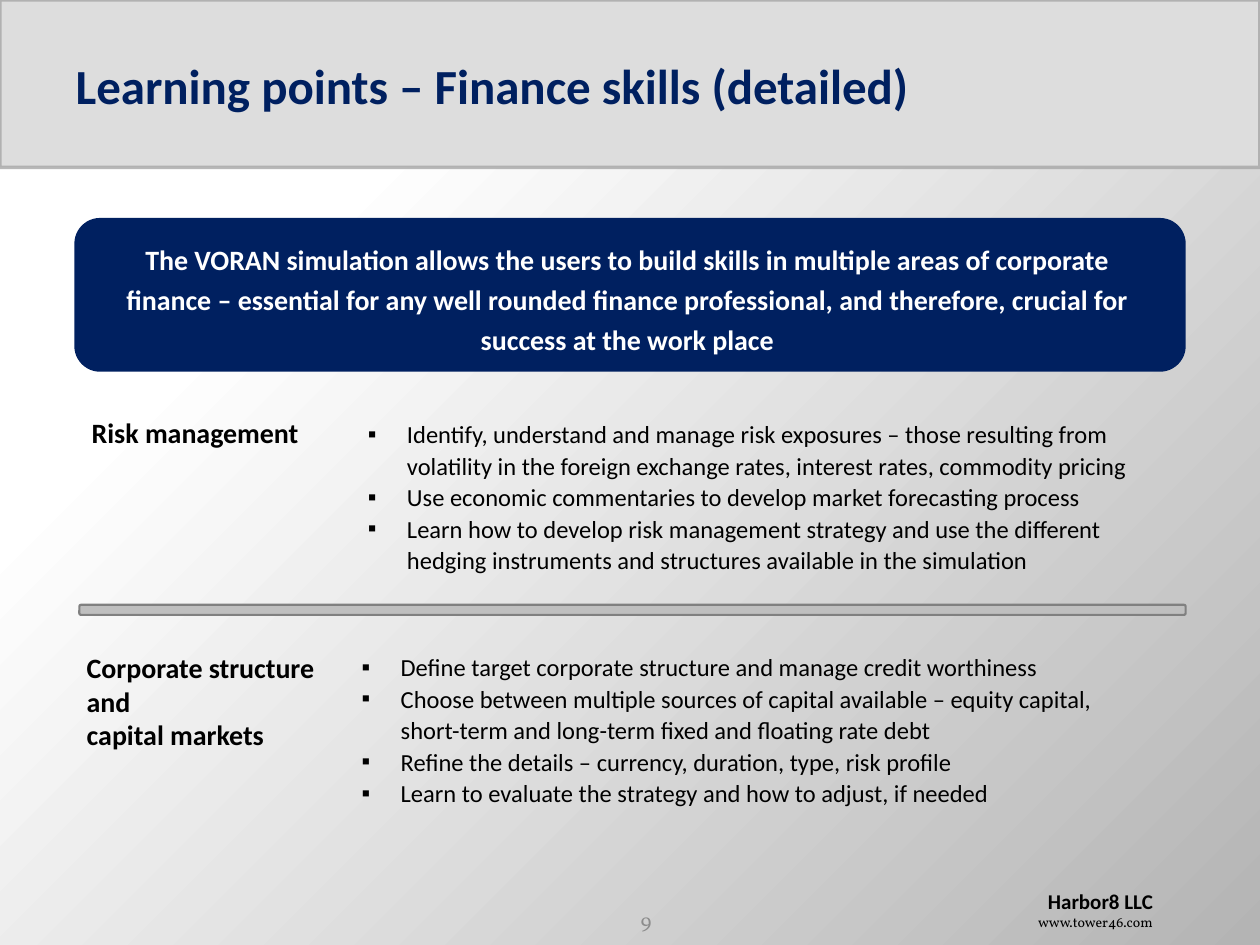
"""Build the finance skills learning points slide."""
from dataclasses import dataclass
from typing import Optional

from lxml.etree import SubElement
from pptx import Presentation
from pptx.dml.color import RGBColor
from pptx.enum.shapes import MSO_SHAPE
from pptx.enum.text import MSO_ANCHOR, MSO_AUTO_SIZE, PP_ALIGN
from pptx.oxml import parse_xml
from pptx.oxml.ns import nsdecls, qn
from pptx.util import Inches, Pt


@dataclass(frozen=True)
class Theme:
    """Colours, fonts and type sizes of the slide."""
    navy: str = "002060"
    black: str = "000000"
    white: str = "FFFFFF"
    band: str = "DDDDDD"
    band_line: str = "A6A6A6"
    rule: str = "BFBFBF"
    rule_line: str = "808080"
    shade: str = "B4B4B4"
    muted: str = "8C8C8C"
    sans: str = "Calibri"
    serif: str = "Vollkorn"
    title: int = 28
    head: int = 16
    body: int = 14
    small: int = 12
    tiny: int = 8


T = Theme()


@dataclass(frozen=True)
class Box:
    """A rectangle in inches."""
    x: float
    y: float
    w: float
    h: float


@dataclass(frozen=True)
class Style:
    """The look of a paragraph."""
    size: int
    color: str = T.black
    bold: bool = False
    font: str = T.sans
    align: PP_ALIGN = PP_ALIGN.LEFT
    spacing: Optional[int] = None
    bullet: Optional[str] = None


@dataclass(frozen=True)
class Topic:
    """A skill area with its learning points."""
    label: list[str]
    label_box: Box
    label_spacing: Optional[int]
    points: list[str]
    points_box: Box


TOPICS = [
    Topic(["Risk management"], Box(0.63, 3.25, 2.6, 0.37), None, [
        "Identify, understand and manage risk exposures – those resulting from volatility "
        "in the foreign exchange rates, interest rates, commodity pricing",
        "Use economic commentaries to develop market forecasting process",
        "Learn how to develop risk management strategy and use the different hedging "
        "instruments and structures available in the simulation",
    ], Box(2.82, 3.26, 6.3, 1.67)),
    Topic(["Corporate structure", "and", "capital markets"], Box(0.59, 5.12, 2.6, 0.9), 19, [
        "Define target corporate structure and manage credit worthiness",
        "Choose between multiple sources of capital available – equity capital, "
        "short-term and long-term fixed and floating rate debt",
        "Refine the details – currency, duration, type, risk profile",
        "Learn to evaluate the strategy and how to adjust, if needed",
    ], Box(2.77, 5.11, 6.51, 1.67)),
]


def place(shape, box: Box) -> None:
    """Move and size a shape."""
    shape.left, shape.top = Inches(box.x), Inches(box.y)
    shape.width, shape.height = Inches(box.w), Inches(box.h)


def write(p, text: str, style: Style) -> None:
    """Fill a paragraph with styled text."""
    p.text = text
    p.alignment = style.align
    p.space_before = Pt(0)
    if style.spacing:
        p.line_spacing = Pt(style.spacing)
    if style.bullet:
        pPr = p._p.get_or_add_pPr()
        pPr.set("marL", str(Inches(0.31)))
        pPr.set("indent", str(Inches(-0.31)))
        SubElement(pPr, qn("a:buChar")).set("char", style.bullet)
    for r in p.runs:
        r.font.name = style.font
        r.font.size = Pt(style.size)
        r.font.bold = style.bold
        r.font.color.rgb = RGBColor.from_string(style.color)


def fill_text(shape, lines: list[tuple[str, Style]], anchor=MSO_ANCHOR.TOP) -> None:
    """Write styled lines into a shape."""
    tf = shape.text_frame
    tf.word_wrap = True
    tf.auto_size = MSO_AUTO_SIZE.NONE
    tf.vertical_anchor = anchor
    for i, (text, style) in enumerate(lines):
        write(tf.add_paragraph() if i else tf.paragraphs[0], text, style)


def add_text(s, box: Box, lines: list[tuple[str, Style]], anchor=MSO_ANCHOR.TOP) -> None:
    """Add a text box."""
    tb = s.shapes.add_textbox(0, 0, 0, 0)
    place(tb, box)
    fill_text(tb, lines, anchor)


def add_panel(s, kind: MSO_SHAPE, box: Box, fill: str,
              line: Optional[str] = None, width: float = 0):
    """Add a filled panel with an optional outline."""
    sp = s.shapes.add_shape(kind, 0, 0, 0, 0)
    place(sp, box)
    sp.shadow.inherit = False
    sp.fill.solid()
    sp.fill.fore_color.rgb = RGBColor.from_string(fill)
    if line:
        sp.line.color.rgb = RGBColor.from_string(line)
        sp.line.width = Pt(width)
    else:
        sp.line.fill.background()
    return sp


def set_background(s) -> None:
    """Shade the slide outward from its top left corner."""
    s.element.cSld.insert(0, parse_xml(
        f'<p:bg {nsdecls("p", "a")}><p:bgPr><a:gradFill rotWithShape="1"><a:gsLst>'
        f'<a:gs pos="24000"><a:srgbClr val="{T.white}"/></a:gs>'
        f'<a:gs pos="100000"><a:srgbClr val="{T.shade}"/></a:gs></a:gsLst>'
        '<a:path path="circle"><a:fillToRect r="100000" b="100000"/></a:path>'
        '</a:gradFill><a:effectLst/></p:bgPr></p:bg>'))


def main() -> None:
    """Build and save the slide."""
    prs = Presentation()
    prs.slide_width, prs.slide_height = Inches(10), Inches(7.5)
    s = prs.slides.add_slide(prs.slide_layouts[3])
    set_background(s)
    title, *bodies = s.placeholders

    band = add_panel(s, MSO_SHAPE.RECTANGLE, Box(0, 0, 10, 1.33), T.band, T.band_line, 2)
    line_color = band.line.fill._xPr.find(".//" + qn("a:ln")).find(".//" + qn("a:srgbClr")) \
        if band.line.fill._xPr.tag != qn("a:ln") else band.line.fill._xPr.find(".//" + qn("a:srgbClr"))
    SubElement(line_color, qn("a:alpha")).set("val", "78000")
    title.element.addprevious(band.element)

    place(title, Box(0.5, 0.05, 9, 1.25))
    fill_text(title, [("Learning points – Finance skills (detailed)",
                       Style(T.title, T.navy, True))], MSO_ANCHOR.MIDDLE)

    add_panel(s, MSO_SHAPE.ROUNDED_RECTANGLE, Box(0.59, 1.73, 8.82, 1.22), T.navy)
    add_text(s, Box(0.76, 1.82, 8.44, 1.07), [(
        "The VORAN simulation allows the users to build skills in multiple areas of corporate "
        "finance – essential for any well rounded finance professional, and therefore, crucial "
        "for success at the work place",
        Style(T.head, T.white, True, align=PP_ALIGN.CENTER, spacing=23))])

    point = Style(T.body, spacing=18, bullet="▪")
    for topic, body in zip(TOPICS, bodies):
        label = Style(T.head, bold=True, spacing=topic.label_spacing)
        add_text(s, topic.label_box, [(text, label) for text in topic.label])
        place(body, topic.points_box)
        fill_text(body, [(text, point) for text in topic.points])

    add_panel(s, MSO_SHAPE.ROUNDED_RECTANGLE, Box(0.63, 4.8, 8.78, 0.08),
              T.rule, T.rule_line, 1.25)
    right = PP_ALIGN.RIGHT
    add_text(s, Box(8, 7, 1.25, 0.44), [
        ("Harbor8 LLC", Style(T.small, bold=True, align=right)),
        ("www.tower46.com", Style(T.tiny, font=T.serif, align=right))])
    add_text(s, Box(4.73, 7.1, 0.54, 0.4),
             [("9", Style(T.small, T.muted, font=T.serif, align=right))], MSO_ANCHOR.MIDDLE)
    prs.save("out.pptx")


if __name__ == "__main__":
    main()
